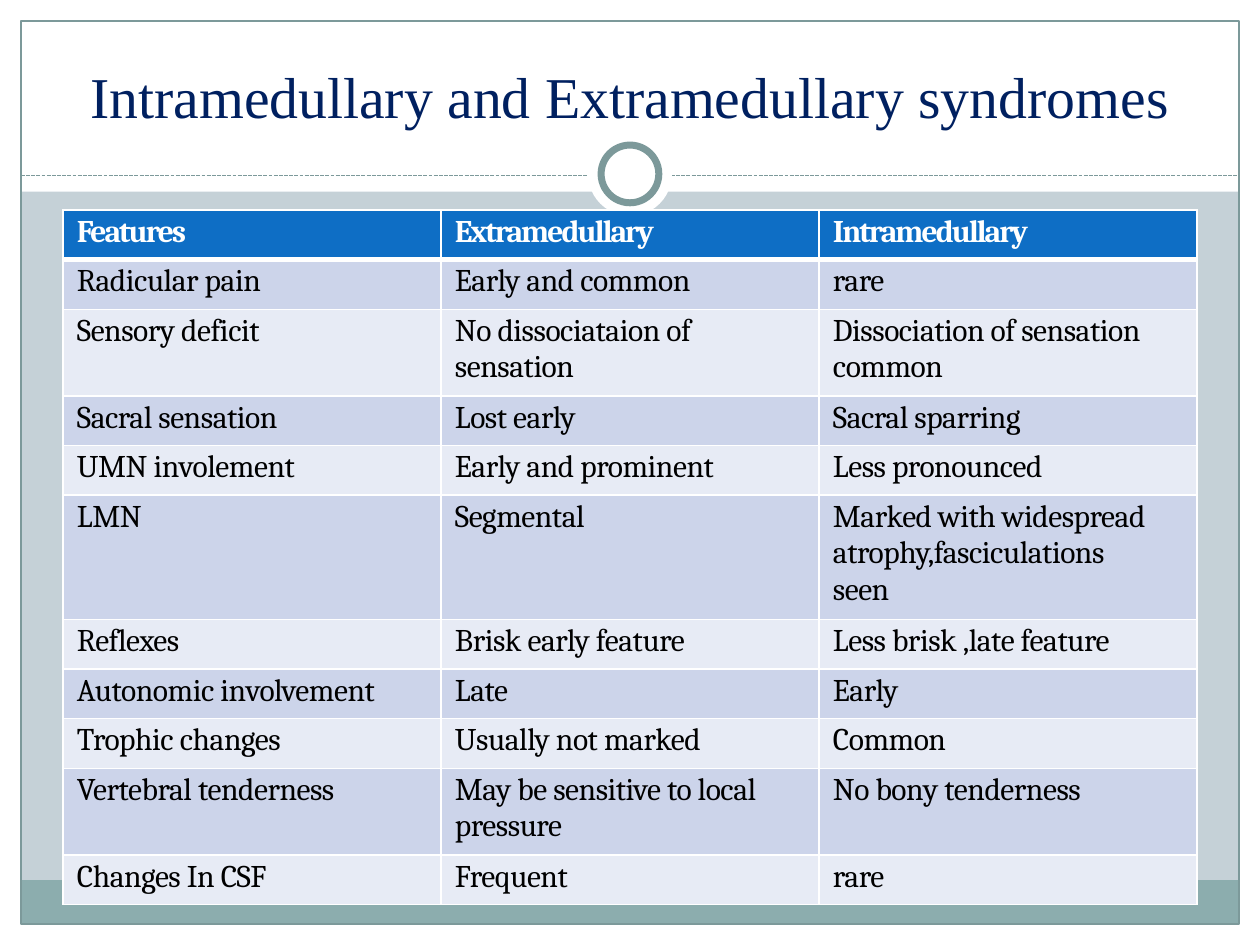
from lxml import etree
from pptx import Presentation
from pptx import util as u
from pptx.dml.color import RGBColor
from pptx.enum import dml, shapes, text
from pptx.oxml import ns

Pt = u.Pt
WHITE = RGBColor(0xFF, 0xFF, 0xFF)
BLACK = RGBColor(0, 0, 0)
NAVY = RGBColor(0x00, 0x20, 0x60)
MIST = RGBColor(0xC5, 0xD1, 0xD7)
TEAL = RGBColor(0x8C, 0xAD, 0xAE)
SLATE = RGBColor(0x7C, 0x99, 0x9A)
HEADER = RGBColor(0x0E, 0x6E, 0xC5)
BANDS = (RGBColor(0xE7, 0xEB, 0xF5), RGBColor(0xCC, 0xD4, 0xEA))

WIDTH, HEIGHT, EDGE = 720, 540, 12
ROW_HEIGHTS = {1: 28.4, 2: 49.5, 3: 71}

# Each row: number of text lines, then the three cells
ROWS = [
    (1, "Features", "Extramedullary", "Intramedullary"),
    (1, "Radicular pain", "Early and common", "rare"),
    (2, "Sensory deficit", "No dissociataion of sensation",
     "Dissociation of sensation common"),
    (1, "Sacral sensation", "Lost early", "Sacral sparring"),
    (1, "UMN involement", "Early and prominent", "Less pronounced"),
    (3, "LMN", "Segmental",
     "Marked with widespread atrophy,fasciculations seen"),
    (1, "Reflexes", "Brisk early feature", "Less brisk ,late feature"),
    (1, "Autonomic involvement", "Late", "Early"),
    (1, "Trophic changes", "Usually not marked", "Common"),
    (2, "Vertebral tenderness", "May be sensitive to local pressure",
     "No bony tenderness"),
    (1, "Changes In CSF", "Frequent", "rare"),
]


def apply(target, values):
    for name, value in values.items():
        setattr(target, name, value)


class SlideBuilder:
    title_font = {"name": "Times New Roman", "size": Pt(33)}
    cell_font = {"name": "Cambria", "size": Pt(18)}
    cell_margins = {"margin_left": Pt(8), "margin_right": Pt(24),
                    "margin_top": Pt(2.2), "margin_bottom": 0}

    def __init__(self, page):
        self.page = page

    def background(self, color):
        fill = self.page.background.fill
        fill.solid()
        fill.fore_color.rgb = color

    def shape(self, kind, place, fill=None, line=None, weight=0.75):
        shape = self.page.shapes.add_shape(kind, *map(Pt, place))
        shape.shadow.inherit = False
        if fill is None:
            shape.fill.background()
        else:
            shape.fill.solid()
            shape.fill.fore_color.rgb = fill
        if line is None:
            shape.line.fill.background()
        else:
            shape.line.color.rgb = line
            shape.line.width = Pt(weight)

    def circle(self, center, diameter, **style):
        x, y = center
        place = (x - diameter / 2, y - diameter / 2, diameter, diameter)
        self.shape(shapes.MSO_SHAPE.OVAL, place, **style)

    def dashed_rule(self, left, right, y, color):
        rule = self.page.shapes.add_connector(
            shapes.MSO_CONNECTOR.STRAIGHT, Pt(left), Pt(y), Pt(right), Pt(y))
        rule.line.color.rgb = color
        apply(rule.line, {"width": Pt(0.75),
                          "dash_style": dml.MSO_LINE.SQUARE_DOT})
        etree.SubElement(rule._element.spPr, ns.qn("a:effectLst"))

    def span(self, para, words, font, color, spacing=0):
        span = para.add_run()
        span.text = words
        apply(span.font, font)
        span.font.color.rgb = color
        if spacing:
            span._r.get_or_add_rPr().set("spc", str(round(spacing * 100)))

    def title(self, words, place):
        box = self.page.shapes.add_textbox(*map(Pt, place))
        apply(box.text_frame, {"word_wrap": True,
                               "vertical_anchor": text.MSO_ANCHOR.BOTTOM})
        para = box.text_frame.paragraphs[0]
        para.alignment = text.PP_ALIGN.CENTER
        self.span(para, words, self.title_font, NAVY)

    def borders(self, cell, **weights):
        props = cell._tc.get_or_add_tcPr()
        for side in "LRTB":
            line = etree.SubElement(props, ns.qn("a:ln" + side),
                                    w=str(Pt(weights.get(side, 1))))
            solid = etree.SubElement(line, ns.qn("a:solidFill"))
            etree.SubElement(solid, ns.qn("a:srgbClr"), val=str(WHITE))

    def cell(self, cell, words, row):
        is_header = row == 0
        self.borders(cell, **{0: {"B": 3}, 1: {"T": 3}}.get(row, {}))
        cell.fill.solid()
        cell.fill.fore_color.rgb = HEADER if is_header else BANDS[row % 2]
        apply(cell, self.cell_margins)
        para = cell.text_frame.paragraphs[0]
        para.space_before = Pt(2.4)
        self.span(para, words, {**self.cell_font, "bold": is_header},
                  WHITE if is_header else BLACK, -1.1 if is_header else -0.25)

    def table(self, rows, place):
        heights = [ROW_HEIGHTS[lines] for lines, *_ in rows]
        left, top, width = place
        table = self.page.shapes.add_table(
            len(rows), len(rows[0]) - 1,
            *map(Pt, (left, top, width, sum(heights)))).table
        apply(table, {"first_row": False, "horz_banding": False})
        for row, (height, (_, *words)) in enumerate(zip(heights, rows)):
            table.rows[row].height = Pt(height)
            for column, entry in enumerate(words):
                self.cell(table.cell(row, column), entry, row)


def main():
    deck = Presentation()
    apply(deck, {"slide_width": Pt(WIDTH), "slide_height": Pt(HEIGHT)})
    builder = SlideBuilder(deck.slides.add_slide(deck.slide_layouts[6]))
    rectangle = shapes.MSO_SHAPE.RECTANGLE
    inner_width = WIDTH - 2 * EDGE

    # White margins and title band
    builder.background(MIST)
    for place in ((0, HEIGHT - EDGE, WIDTH, EDGE), (0, 0, WIDTH, 109.5),
                  (0, 0, EDGE, HEIGHT), (WIDTH - EDGE, 0, EDGE, HEIGHT)):
        builder.shape(rectangle, place, fill=WHITE)

    # Footer band and frame
    builder.shape(rectangle, (EDGE, 503, inner_width, 25), fill=TEAL)
    builder.shape(rectangle, (EDGE, EDGE, inner_width, HEIGHT - 2 * EDGE),
                  line=SLATE)

    # Divider with ring
    builder.dashed_rule(EDGE, WIDTH - EDGE, 100.5, SLATE)
    ring_center = (WIDTH / 2, 99.4)
    builder.circle(ring_center, 48, fill=WHITE)
    builder.circle(ring_center, 33, fill=WHITE, line=SLATE, weight=4)

    # Title and comparison table
    builder.title("Intramedullary and Extramedullary syndromes",
                  (24, 18, 672, 60))
    builder.table(ROWS, (36, 120, 648))
    deck.save("out.pptx")


if __name__ == "__main__":
    main()
